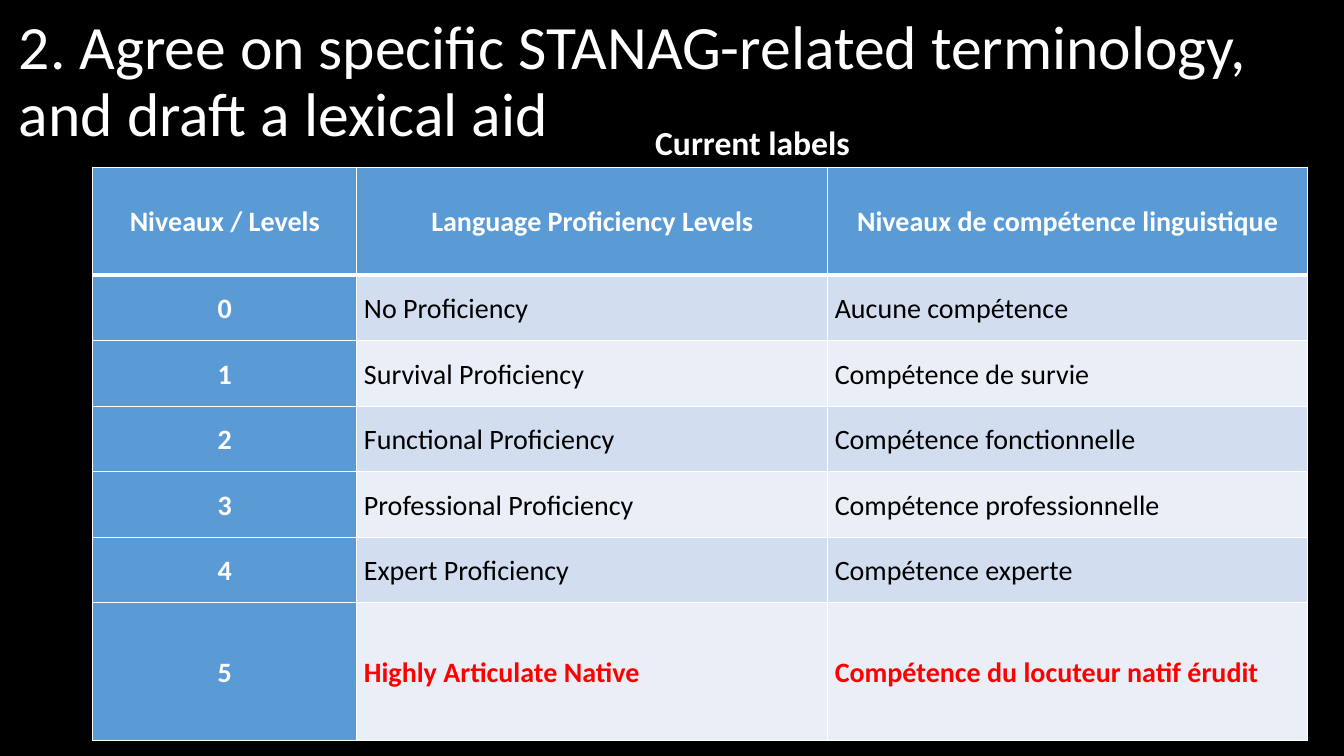
from lxml import etree
from pptx import Presentation
from pptx.dml.color import RGBColor
from pptx.enum import text
from pptx.oxml import ns
from pptx.util import Inches, Pt

BLACK = RGBColor(0x00, 0x00, 0x00)
WHITE = RGBColor(0xFF, 0xFF, 0xFF)
RED = RGBColor(0xFF, 0x00, 0x00)
BLUE = RGBColor(0x5B, 0x9B, 0xD5)
BANDS = (RGBColor(0xD2, 0xDE, 0xEF), RGBColor(0xEA, 0xEF, 0xF7))

FONT = "Calibri"
COLUMN_WIDTHS = (2.62, 4.67, 4.76)
ROW_HEIGHTS = (1.07, 0.65, 0.65, 0.65, 0.65, 0.65, 1.37)
LEVELS = (
    ("Niveaux / Levels", "Language Proficiency Levels", "Niveaux de compétence linguistique"),
    ("0", "No Proficiency", "Aucune compétence"),
    ("1", "Survival Proficiency", "Compétence de survie"),
    ("2", "Functional Proficiency", "Compétence fonctionnelle"),
    ("3", "Professional Proficiency", "Compétence professionnelle"),
    ("4", "Expert Proficiency", "Compétence experte"),
    ("5", "Highly Articulate Native", "Compétence du locuteur natif érudit"),
)


def write(frame, words, size, color, bold=False, spacing=1.0):
    frame.text = words
    paragraph = frame.paragraphs[0]
    paragraph.line_spacing = spacing
    font = paragraph.runs[0].font
    font.name, font.size, font.bold = FONT, Pt(size), bold
    font.color.rgb = color
    return paragraph


def add_text(slide, box, words, size, bold=False, spacing=1.0):
    frame = slide.shapes.add_textbox(*map(Inches, box)).text_frame
    frame.word_wrap = True
    write(frame, words, size, WHITE, bold, spacing)
    return frame


def set_borders(cell, top, bottom):
    """Draw white borders; top and bottom are widths in points."""
    properties = cell._tc.get_or_add_tcPr()
    for side, width in (("L", 1), ("R", 1), ("T", top), ("B", bottom)):
        line = etree.SubElement(properties, ns.qn(f"a:ln{side}"), w=str(Pt(width)))
        fill = etree.SubElement(line, ns.qn("a:solidFill"))
        etree.SubElement(fill, ns.qn("a:srgbClr"), val=str(WHITE))


def format_cell(cell, words, row, column):
    is_heading = row == 0 or column == 0
    is_last = row == len(LEVELS) - 1
    color = WHITE if is_heading else RED if is_last else BLACK
    paragraph = write(cell.text_frame, words, 20, color, is_heading or is_last, 1.07)
    paragraph.alignment = text.PP_ALIGN.CENTER if is_heading else text.PP_ALIGN.LEFT
    cell.vertical_anchor = text.MSO_ANCHOR.MIDDLE
    cell.margin_left = cell.margin_right = Inches(0.07)
    cell.margin_top = cell.margin_bottom = 0
    set_borders(cell, top=3 if row == 1 else 1, bottom=3 if row == 0 else 1)
    cell.fill.solid()
    cell.fill.fore_color.rgb = BLUE if is_heading else BANDS[(row - 1) % 2]


def add_level_table(slide):
    table = slide.shapes.add_table(
        len(LEVELS), len(COLUMN_WIDTHS), Inches(0.92), Inches(1.66),
        Inches(sum(COLUMN_WIDTHS)), Inches(sum(ROW_HEIGHTS))).table
    for column, width in zip(table.columns, COLUMN_WIDTHS):
        column.width = Inches(width)
    for row, height in zip(table.rows, ROW_HEIGHTS):
        row.height = Inches(height)
    for row, labels in enumerate(LEVELS):
        for column, label in enumerate(labels):
            format_cell(table.cell(row, column), label, row, column)


def main():
    presentation = Presentation()
    presentation.slide_width = Inches(13.33)
    presentation.slide_height = Inches(7.5)
    slide = presentation.slides.add_slide(presentation.slide_layouts[6])
    slide.background.fill.solid()
    slide.background.fill.fore_color.rgb = BLACK

    title = add_text(
        slide, (0.09, 0.1, 13.03, 1.45),
        "2. Agree on specific STANAG-related terminology, and draft a lexical aid",
        44, spacing=0.9)
    title.vertical_anchor = text.MSO_ANCHOR.MIDDLE
    add_level_table(slide)
    add_text(slide, (6.4, 1.16, 2.32, 0.5), "Current labels", 24, bold=True)
    presentation.save("out.pptx")


if __name__ == "__main__":
    main()
